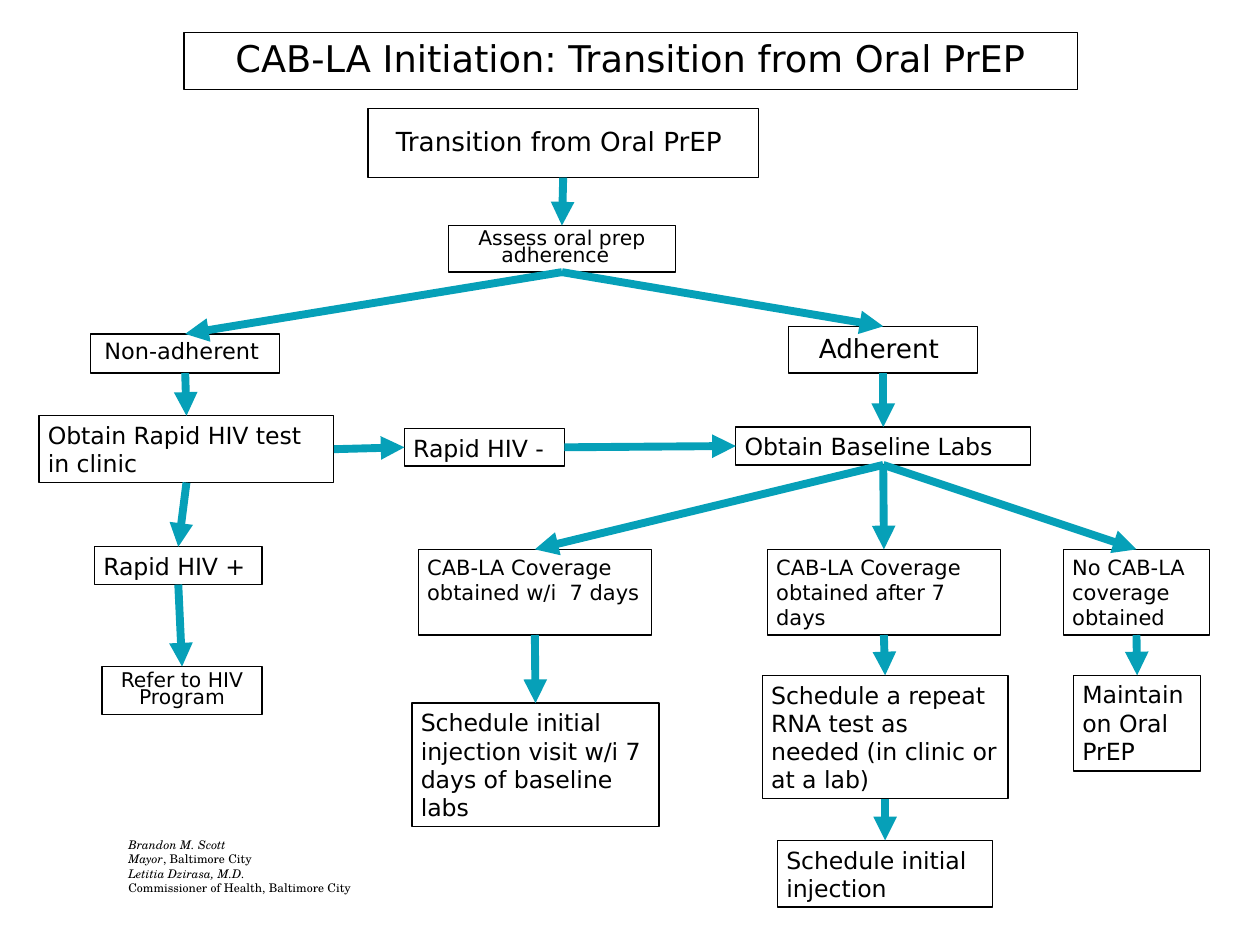
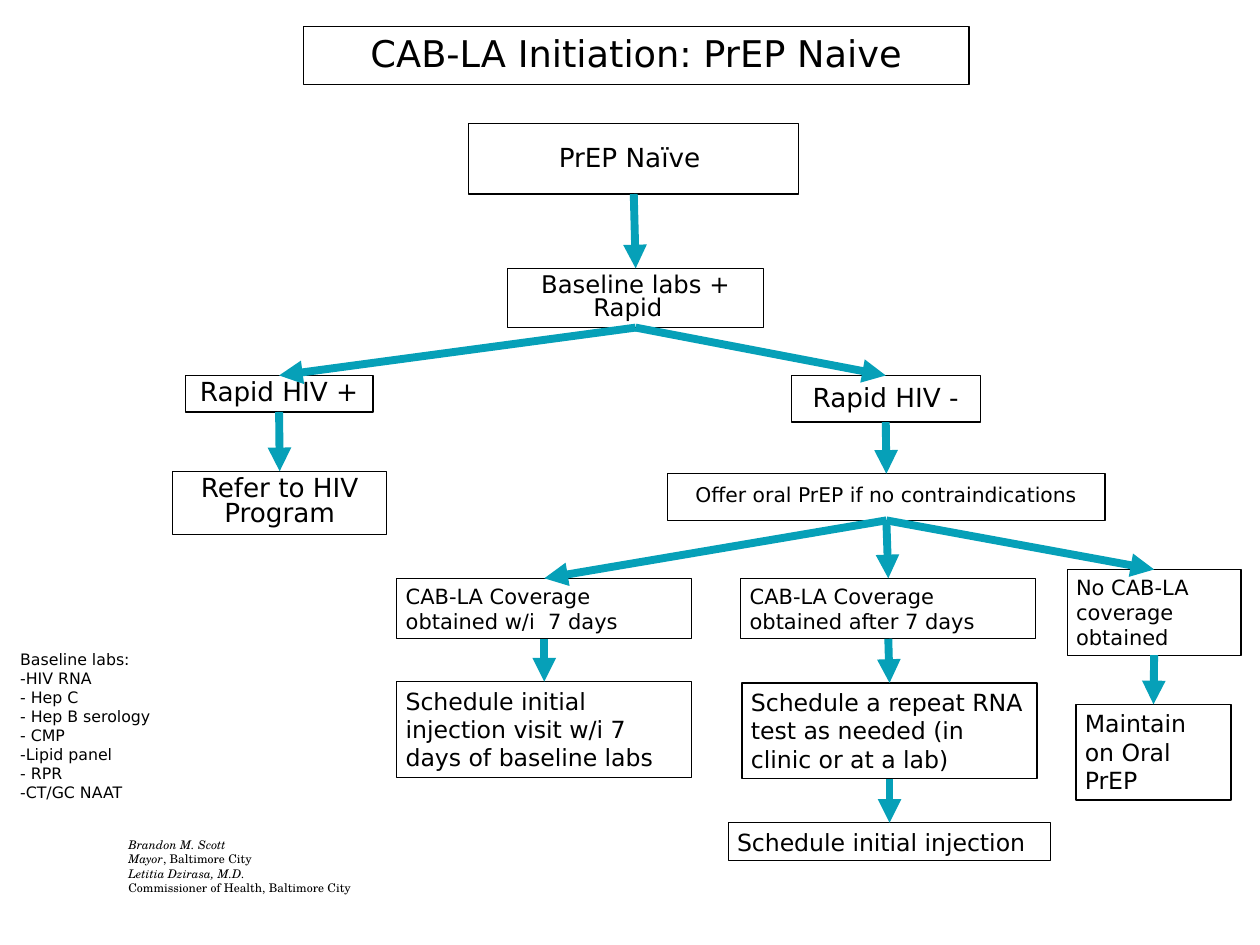
from dataclasses import dataclass

import lxml.etree
import pptx
import pptx.dml.color
import pptx.enum.shapes
import pptx.enum.text
import pptx.oxml.ns
import pptx.util

Inches = pptx.util.Inches
Pt = pptx.util.Pt
Align = pptx.enum.text.PP_ALIGN
Anchor = pptx.enum.text.MSO_ANCHOR

BLACK = pptx.dml.color.RGBColor(0x00, 0x00, 0x00)
WHITE = pptx.dml.color.RGBColor(0xFF, 0xFF, 0xFF)
TEAL = pptx.dml.color.RGBColor(0x06, 0xA0, 0xB8)

BODY_FONT = "DejaVu Sans"
FOOTER_FONT = "TeX Gyre Schola"
TITLE_ONLY = 5
TOP, LEFT, BOTTOM, RIGHT = range(4)  # connection sites of a rectangle

HIV_POSITIVE = "Rapid HIV +"
HIV_NEGATIVE = "Rapid HIV -"
REFER = "Refer to HIV Program"
COVERED_SOON = "CAB-LA Coverage obtained w/i  7 days"
COVERED_LATE = "CAB-LA Coverage obtained after 7 days "
NOT_COVERED = "No CAB-LA coverage obtained "
VISIT = "Schedule initial injection visit w/i 7 days of baseline labs "
REPEAT_TEST = "Schedule a repeat RNA test as needed (in clinic or at a lab)"
INJECTION = "Schedule initial injection "
MAINTAIN = "Maintain on Oral PrEP"

# Each footer line is a list of (text, italic) pieces.
FOOTER = (
    [("Brandon M. Scott", True)],
    [("Mayor", True), (", Baltimore City", False)],
    [("Letitia Dzirasa, M.D.", True)],
    [("Commissioner of Health, Baltimore City", False)],
)
BASELINE_LABS = (
    "Baseline labs:",
    "-HIV RNA",
    "- Hep C",
    "- Hep B serology",
    "- CMP",
    "-Lipid panel ",
    "- RPR",
    "-CT/GC NAAT",
)


@dataclass(frozen=True)
class Area:
    left: float
    top: float
    width: float
    height: float

    def lengths(self) -> tuple:
        return tuple(map(Inches, (self.left, self.top, self.width, self.height)))


@dataclass(frozen=True)
class Step:
    """A box of the flow; with a line spacing, its text is centred."""

    text: str
    area: Area
    size: float = 13.5
    spacing: float | None = None
    filled: bool = False


@dataclass(frozen=True)
class Arrow:
    source: str
    target: str
    exit_site: int = BOTTOM
    entry_site: int = TOP


@dataclass(frozen=True)
class Flow:
    title: str
    title_area: Area
    steps: dict[str, Step]
    arrows: tuple[Arrow, ...]


def coverage_arrows(source: str) -> tuple[Arrow, ...]:
    """Arrows of the three coverage branches, which both flows end with."""
    return (
        Arrow(source, "covered soon"),
        Arrow(source, "covered late"),
        Arrow(source, "not covered"),
        Arrow("covered soon", "visit"),
        Arrow("covered late", "repeat test"),
        Arrow("repeat test", "injection"),
        Arrow("not covered", "maintain"),
    )


ORAL_TRANSITION = Flow(
    "CAB-LA Initiation: Transition from Oral PrEP",
    Area(1.46, 0.26, 7.09, 0.45),
    {
        "start": Step("Transition from Oral PrEP ", Area(2.92, 0.86, 3.1, 0.55), 15, 0.9),
        "assess": Step("Assess oral prep adherence  ", Area(3.56, 1.79, 1.8, 0.37), 11.6, 0.7),
        "non-adherent": Step("Non-adherent ", Area(0.72, 2.65, 1.5, 0.31), 12.8, 0.8),
        "adherent": Step("Adherent ", Area(6.26, 2.59, 1.5, 0.37), 15, 0.9),
        "rapid test": Step("Obtain Rapid HIV test in clinic", Area(0.31, 3.3, 2.34, 0.53)),
        "negative": Step(HIV_NEGATIVE, Area(3.21, 3.4, 1.27, 0.3)),
        "labs": Step("Obtain Baseline Labs ", Area(5.84, 3.39, 2.34, 0.3)),
        "positive": Step(HIV_POSITIVE, Area(0.75, 4.34, 1.33, 0.3)),
        "refer": Step(REFER, Area(0.81, 5.29, 1.27, 0.38), 11.6, 0.7),
        "covered soon": Step(COVERED_SOON, Area(3.32, 4.36, 1.85, 0.68), 12, filled=True),
        "covered late": Step(COVERED_LATE, Area(6.09, 4.36, 1.85, 0.68), 12),
        "not covered": Step(NOT_COVERED, Area(8.44, 4.36, 1.16, 0.68), 12),
        "visit": Step(VISIT, Area(3.27, 5.58, 1.96, 0.98)),
        "repeat test": Step(REPEAT_TEST, Area(6.05, 5.36, 1.95, 0.98), filled=True),
        "maintain": Step(MAINTAIN, Area(8.52, 5.36, 1.01, 0.76)),
        "injection": Step(INJECTION, Area(6.17, 6.67, 1.71, 0.53), filled=True),
    },
    (
        Arrow("start", "assess"),
        Arrow("assess", "non-adherent"),
        Arrow("assess", "adherent"),
        Arrow("non-adherent", "rapid test"),
        Arrow("adherent", "labs"),
        Arrow("rapid test", "negative", RIGHT, LEFT),
        Arrow("negative", "labs", RIGHT, LEFT),
        Arrow("rapid test", "positive"),
        Arrow("positive", "refer"),
        *coverage_arrows("labs"),
    ),
)

PREP_NAIVE = Flow(
    "CAB-LA Initiation: PrEP Naive",
    Area(2.41, 0.21, 5.28, 0.46),
    {
        "start": Step("PrEP Naïve ", Area(3.72, 0.98, 2.62, 0.56), 15, 0.9),
        "labs": Step("Baseline labs + Rapid  ", Area(4.03, 2.13, 2.03, 0.47), 13.9, 0.8),
        "positive": Step(HIV_POSITIVE, Area(1.47, 2.98, 1.49, 0.29), 15, 0.8),
        "negative": Step(HIV_NEGATIVE, Area(6.28, 2.98, 1.5, 0.37), 15, 0.9),
        "refer": Step(REFER, Area(1.37, 3.74, 1.7, 0.5), 15, 0.8),
        "offer": Step("Offer oral PrEP if no contraindications", Area(5.3, 3.76, 3.47, 0.37), 11.6, 0.7),
        "covered soon": Step(COVERED_SOON, Area(3.15, 4.59, 2.34, 0.48), 12, filled=True),
        "covered late": Step(COVERED_LATE, Area(5.88, 4.59, 2.34, 0.48), 12),
        "not covered": Step(NOT_COVERED, Area(8.47, 4.52, 1.38, 0.68), 12),
        "visit": Step(VISIT, Area(3.15, 5.41, 2.34, 0.76)),
        "repeat test": Step(REPEAT_TEST, Area(5.89, 5.42, 2.34, 0.76), filled=True),
        "maintain": Step(MAINTAIN, Area(8.54, 5.59, 1.23, 0.76)),
        "injection": Step(INJECTION, Area(5.78, 6.53, 2.56, 0.3), filled=True),
    },
    (
        Arrow("start", "labs"),
        Arrow("labs", "positive"),
        Arrow("labs", "negative"),
        Arrow("positive", "refer"),
        Arrow("negative", "offer"),
        *coverage_arrows("offer"),
    ),
)


def style_font(font, size: float, name: str = BODY_FONT) -> None:
    font.name = name
    font.size = Pt(size)
    font.color.rgb = BLACK


def style_outline(shape) -> None:
    shape.line.color.rgb = BLACK
    shape.line.width = Pt(0.75)


def set_tight_margins(frame) -> None:
    frame.word_wrap = True
    frame.margin_left = frame.margin_right = Inches(0.07)
    frame.margin_top = frame.margin_bottom = Inches(0.04)


def centre_text(frame, spacing: float) -> None:
    frame.vertical_anchor = Anchor.MIDDLE
    paragraph = frame.paragraphs[0]
    paragraph.alignment = Align.CENTER
    paragraph.line_spacing = spacing
    paragraph.space_before = Pt(0)


def draw_title(slide, text: str, area: Area) -> None:
    title = slide.shapes.title
    title.left, title.top, title.width, title.height = area.lengths()
    style_outline(title)
    frame = title.text_frame
    frame.text = text
    frame.word_wrap = True
    frame.auto_size = pptx.enum.text.MSO_AUTO_SIZE.NONE
    centre_text(frame, 0.9)
    style_font(frame.paragraphs[0].runs[0].font, 21)


def draw_footer(slide) -> None:
    frame = slide.shapes.add_textbox(*Area(0.92, 6.6, 2.96, 0.56).lengths()).text_frame
    frame.word_wrap = True
    for index, pieces in enumerate(FOOTER):
        paragraph = frame.add_paragraph() if index else frame.paragraphs[0]
        for text, italic in pieces:
            run = paragraph.add_run()
            run.text = text
            style_font(run.font, 6.8, FOOTER_FONT)
            run.font.italic = italic


def draw_step(slide, step: Step):
    box = slide.shapes.add_shape(
        pptx.enum.shapes.MSO_SHAPE.RECTANGLE, *step.area.lengths()
    )
    box.shadow.inherit = False
    style_outline(box)
    if step.filled:
        box.fill.solid()
        box.fill.fore_color.rgb = WHITE
    else:
        box.fill.background()
    frame = box.text_frame
    frame.text = step.text
    set_tight_margins(frame)
    if step.spacing:
        centre_text(frame, step.spacing)
    else:
        frame.vertical_anchor = Anchor.TOP
        frame.paragraphs[0].alignment = Align.LEFT
    style_font(frame.paragraphs[0].runs[0].font, step.size)
    return box


def draw_arrow(slide, boxes: dict, arrow: Arrow) -> None:
    line = slide.shapes.add_connector(
        pptx.enum.shapes.MSO_CONNECTOR.STRAIGHT, 0, 0, 0, 0
    )
    line.begin_connect(boxes[arrow.source], arrow.exit_site)
    line.end_connect(boxes[arrow.target], arrow.entry_site)
    line.line.color.rgb = TEAL
    line.line.width = Pt(4.5)
    properties = line.element.spPr
    qn = pptx.oxml.ns.qn
    lxml.etree.SubElement(properties.get_or_add_ln(), qn("a:tailEnd"), type="triangle")
    lxml.etree.SubElement(properties, qn("a:effectLst"))


def draw_baseline_labs(slide) -> None:
    frame = slide.shapes.add_textbox(*Area(0.09, 5.12, 2.25, 1.29).lengths()).text_frame
    set_tight_margins(frame)
    frame.text = "\n".join(BASELINE_LABS)
    for paragraph in frame.paragraphs:
        style_font(paragraph.runs[0].font, 9)


def add_flow_slide(deck, flow: Flow):
    slide = deck.slides.add_slide(deck.slide_layouts[TITLE_ONLY])
    draw_footer(slide)
    draw_title(slide, flow.title, flow.title_area)
    boxes = {key: draw_step(slide, step) for key, step in flow.steps.items()}
    for arrow in flow.arrows:
        draw_arrow(slide, boxes, arrow)
    return slide


def main() -> None:
    deck = pptx.Presentation()
    deck.slide_width, deck.slide_height = Inches(10), Inches(7.5)
    add_flow_slide(deck, ORAL_TRANSITION)
    draw_baseline_labs(add_flow_slide(deck, PREP_NAIVE))
    deck.save("out.pptx")


if __name__ == "__main__":
    main()
